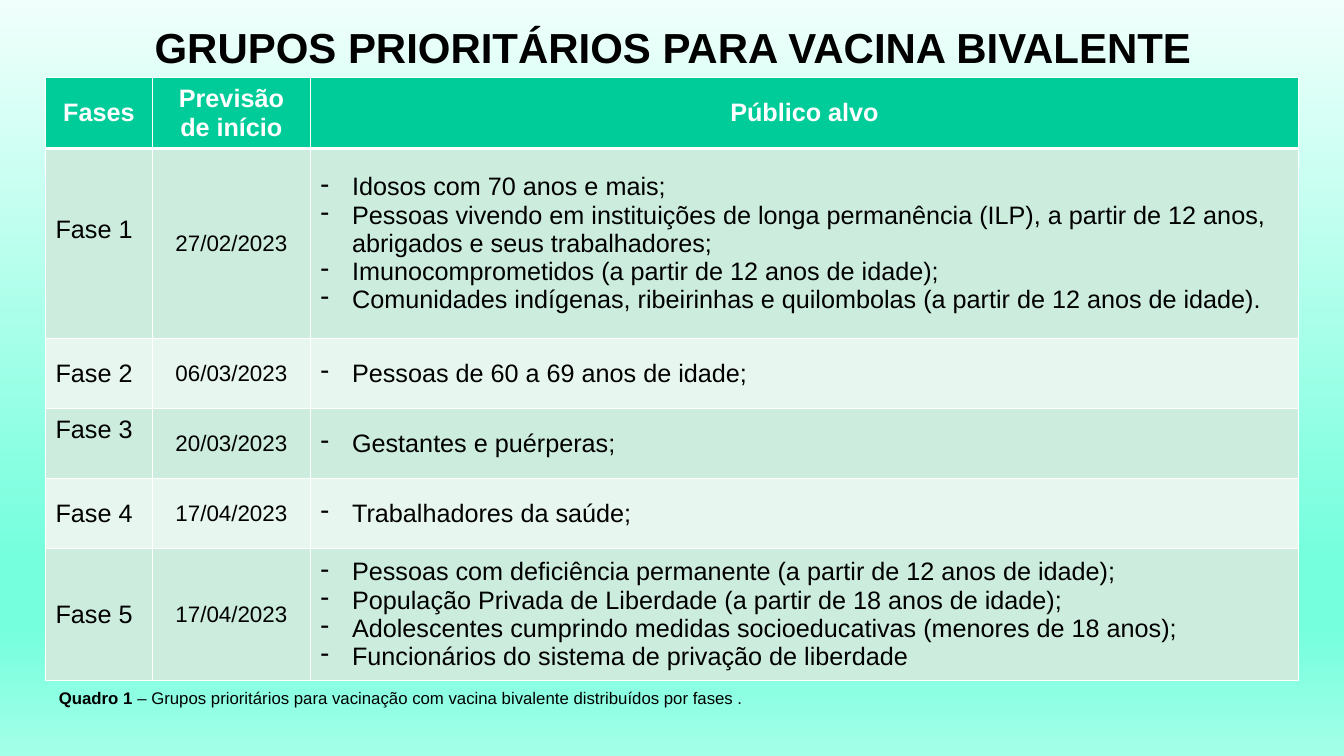
from lxml.etree import SubElement
from pptx import Presentation
from pptx.dml.color import RGBColor
from pptx.enum.text import MSO_ANCHOR as Anchor, MSO_AUTO_SIZE as AutoSize, PP_ALIGN as Align
from pptx.oxml import parse_xml
from pptx.oxml.ns import nsdecls, qn
from pptx.util import Pt

COLORS = {
    "header": "00CC99",
    "odd": "CCECDE",
    "even": "E7F6EF",
    "border": "FFFFFF",
    "header_text": "FFFFFF",
    "text": "000000",
}
BACKGROUND_STOPS = [(0, "F0FFFB"), (74, "75FFDD"), (83, "75FFDD"), (100, "A3FFE8")]
FONT = "Arial"
HEADINGS = ["Fases", "Previsão de início", "Público alvo"]
COLUMN_WIDTHS = [76.3, 113, 705.7]
HEADER_HEIGHT = 50
RAISED_LABELS = {"Fase 1", "Fase 3"}
PHASES = [
    ("Fase 1", "27/02/2023", 136, [
        "Idosos com 70 anos e mais;",
        "Pessoas vivendo em instituições de longa permanência (ILP), a partir de 12 anos, "
        "abrigados e seus trabalhadores;",
        "Imunocomprometidos (a partir de 12 anos de idade);",
        "Comunidades indígenas, ribeirinhas e quilombolas (a partir de 12 anos de idade).",
    ]),
    ("Fase 2", "06/03/2023", 50, ["Pessoas de 60 a 69 anos de idade;"]),
    ("Fase 3", "20/03/2023", 50, ["Gestantes e puérperas;"]),
    ("Fase 4", "17/04/2023", 50, ["Trabalhadores da saúde;"]),
    ("Fase 5", "17/04/2023", 94, [
        "Pessoas com deficiência permanente (a partir de 12 anos de idade);",
        "População Privada de Liberdade (a partir de 18 anos de idade);",
        "Adolescentes cumprindo medidas socioeducativas (menores de 18 anos);",
        "Funcionários do sistema de privação de liberdade",
    ]),
]


def paint_background(slide):
    fill = slide.background.fill
    fill.gradient()
    fill.gradient_angle = 270
    stops = slide.element.find(".//" + qn("a:gsLst"))
    for stop in list(stops):
        stops.remove(stop)
    for percent, color in BACKGROUND_STOPS:
        stop = SubElement(stops, qn("a:gs"), pos=str(percent * 1000))
        SubElement(stop, qn("a:srgbClr"), val=color)


def style_font(font, size, color="text", bold=False):
    font.name = FONT
    font.size = Pt(size)
    font.bold = bold
    font.color.rgb = RGBColor.from_string(COLORS[color])


def add_label(slide, left, top, width, height, pieces, size, align):
    frame = slide.shapes.add_textbox(Pt(left), Pt(top), Pt(width), Pt(height)).text_frame
    frame.word_wrap = True
    frame.auto_size = AutoSize.SHAPE_TO_FIT_TEXT
    line = frame.paragraphs[0]
    line.alignment = align
    for words, bold in pieces:
        run = line.add_run()
        run.text = words
        style_font(run.font, size, bold=bold)


def set_borders(cell, top=1, bottom=1):
    properties = cell._tc.get_or_add_tcPr()
    sides = [("lnL", 1), ("lnR", 1), ("lnT", top), ("lnB", bottom)]
    for position, (side, width) in enumerate(sides):
        properties.insert(position, parse_xml(
            f'<a:{side} {nsdecls("a")} w="{Pt(width)}"><a:solidFill>'
            f'<a:srgbClr val="{COLORS["border"]}"/></a:solidFill></a:{side}>'))


def add_dash(paragraph):
    properties = paragraph._p.get_or_add_pPr()
    properties.set("marL", str(Pt(22.5)))
    properties.set("indent", str(Pt(-22.5)))
    SubElement(properties, qn("a:buFontTx"))
    SubElement(properties, qn("a:buChar"), char="-")


def fill_cell(cell, lines, fill, size=18, color="text", bold=False, align=Align.LEFT, dashes=False):
    cell.fill.solid()
    cell.fill.fore_color.rgb = RGBColor.from_string(COLORS[fill])
    cell.vertical_anchor = Anchor.MIDDLE
    cell.text_frame.text = "\n".join(lines)
    for paragraph in cell.text_frame.paragraphs:
        paragraph.alignment = align
        if dashes:
            add_dash(paragraph)
        for run in paragraph.runs:
            style_font(run.font, size, color, bold)


def add_phase_table(slide):
    heights = [HEADER_HEIGHT] + [height for _, _, height, _ in PHASES]
    table = slide.shapes.add_table(
        len(heights), len(HEADINGS), Pt(32.5), Pt(55.6),
        Pt(sum(COLUMN_WIDTHS)), Pt(sum(heights))).table
    for column, width in zip(table.columns, COLUMN_WIDTHS):
        column.width = Pt(width)
    for row, height in zip(table.rows, heights):
        row.height = Pt(height)
    for column, heading in enumerate(HEADINGS):
        cell = table.cell(0, column)
        fill_cell(cell, [heading], "header", color="header_text", bold=True, align=Align.CENTER)
        set_borders(cell, bottom=3)
    for row, (phase, start, _, audience) in enumerate(PHASES, start=1):
        shade = "odd" if row % 2 else "even"
        phase_cell, start_cell, audience_cell = table.rows[row].cells
        fill_cell(phase_cell, [phase], shade)
        fill_cell(start_cell, [start], shade, size=16, align=Align.CENTER)
        fill_cell(audience_cell, audience, shade, dashes=True)
        if phase in RAISED_LABELS:
            phase_cell.margin_bottom = Pt(23.6)
        for cell in (phase_cell, start_cell, audience_cell):
            set_borders(cell, top=3 if row == 1 else 1)


def main():
    deck = Presentation()
    deck.slide_width, deck.slide_height = Pt(960), Pt(540)
    slide = deck.slides.add_slide(deck.slide_layouts[6])
    paint_background(slide)
    add_label(slide, 35, 11.6, 892, 43.6,
              [("GRUPOS PRIORITÁRIOS PARA VACINA BIVALENTE", True)], 30, Align.CENTER)
    add_phase_table(slide)
    add_label(slide, 35, 487.4, 742, 21.8,
              [("Quadro 1 ", True),
               ("– Grupos prioritários para vacinação com vacina bivalente distribuídos por fases .", False)],
              12, Align.LEFT)
    deck.save("out.pptx")


if __name__ == "__main__":
    main()
